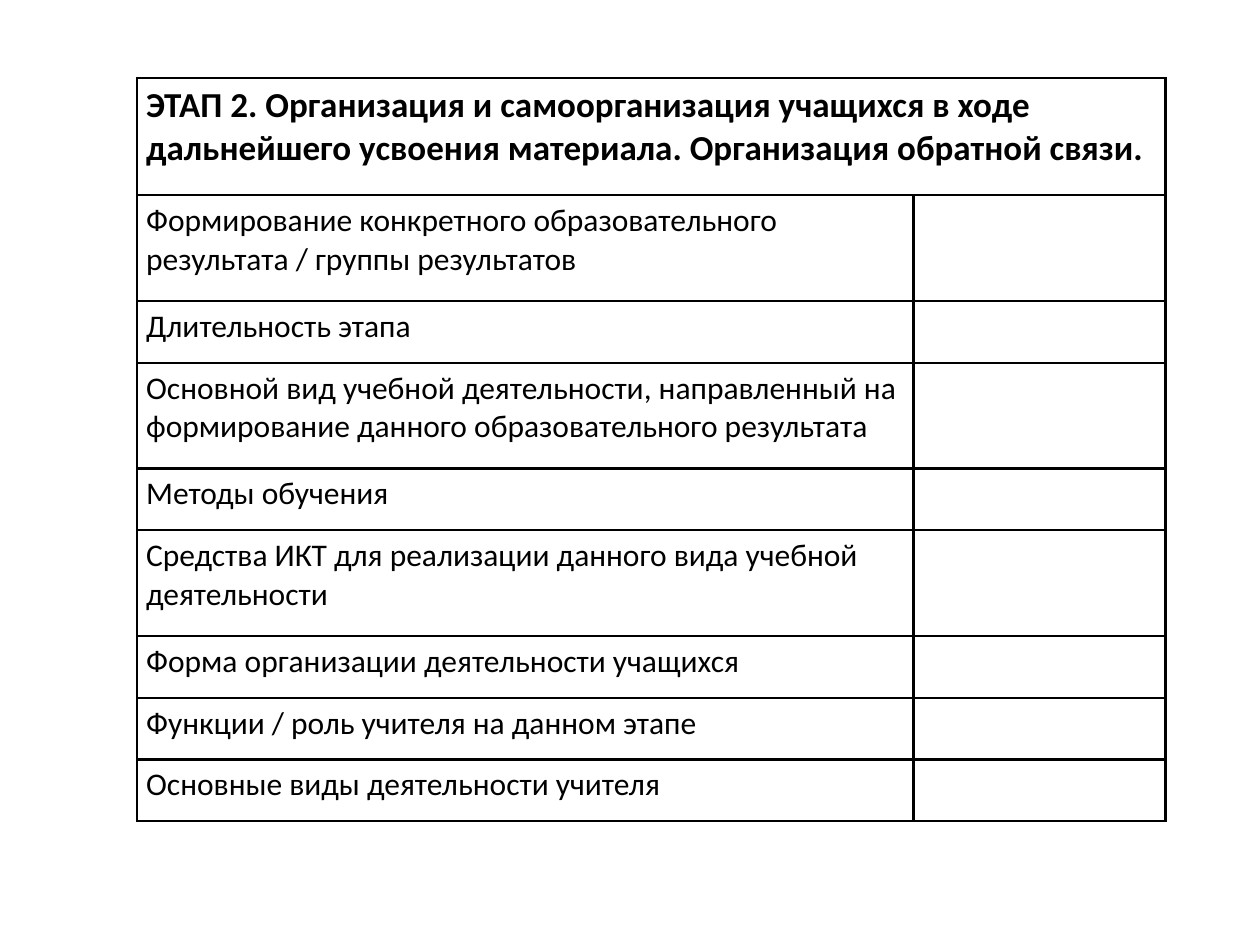
"""Build a slide with a lesson-stage planning table."""
from dataclasses import dataclass

from lxml import etree
from pptx import Presentation
from pptx.dml.color import RGBColor
from pptx.enum.text import MSO_ANCHOR
from pptx.oxml.ns import qn
from pptx.table import _Cell
from pptx.util import Inches, Pt

TOP = MSO_ANCHOR.TOP
BLANK_LAYOUT = 6
BORDER_TAGS = ("a:lnL", "a:lnR", "a:lnT", "a:lnB")


@dataclass(frozen=True)
class Theme:
    font: str = "Calibri"
    ink: str = "000000"
    heading_size: int = 20
    body_size: int = 18
    border_width: float = 1.5


@dataclass(frozen=True)
class Row:
    text: str
    height: float = 0.49
    heading: bool = False


THEME = Theme()
TALL = 0.84
LEFT, TABLE_TOP = 1.09, 0.62
COLUMN_WIDTHS = (6.16, 2)
ROWS = (
    Row("ЭТАП 2. Организация и самоорганизация учащихся в ходе дальнейшего "
        "усвоения материала. Организация обратной связи.", 0.93, True),
    Row("Формирование конкретного образовательного результата / группы результатов", TALL),
    Row("Длительность этапа"),
    Row("Основной вид учебной деятельности, направленный на формирование "
        "данного образовательного результата", TALL),
    Row("Методы обучения"),
    Row("Средства ИКТ для реализации данного вида учебной деятельности", TALL),
    Row("Форма организации деятельности учащихся"),
    Row("Функции / роль учителя на данном этапе"),
    Row("Основные виды деятельности учителя"),
)


def style_cell(cell: _Cell) -> None:
    cell.margin_left = cell.margin_right = Inches(0.07)
    cell.margin_top = cell.margin_bottom = Inches(0.05)
    cell.vertical_anchor = TOP
    props = cell._tc.get_or_add_tcPr()
    for tag in BORDER_TAGS:
        line = etree.SubElement(props, qn(tag), w=str(Pt(THEME.border_width)))
        fill = etree.SubElement(line, qn("a:solidFill"))
        etree.SubElement(fill, qn("a:srgbClr"), val=THEME.ink)
    cell.fill.background()


def write_label(cell: _Cell, row: Row) -> None:
    p = cell.text_frame.paragraphs[0]
    p.text = row.text
    font = p.runs[0].font
    font.name = THEME.font
    font.size = Pt(THEME.heading_size if row.heading else THEME.body_size)
    font.bold = row.heading
    font.color.rgb = RGBColor.from_string(THEME.ink)


def main() -> None:
    prs = Presentation()
    prs.slide_width, prs.slide_height = Inches(10), Inches(7.5)
    s = prs.slides.add_slide(prs.slide_layouts[BLANK_LAYOUT])
    table = s.shapes.add_table(
        len(ROWS), len(COLUMN_WIDTHS), Inches(LEFT), Inches(TABLE_TOP),
        Inches(sum(COLUMN_WIDTHS)), Inches(sum(row.height for row in ROWS))).table
    table.first_row = table.horz_banding = False
    for column, width in zip(table.columns, COLUMN_WIDTHS):
        column.width = Inches(width)
    for i, row in enumerate(ROWS):
        table.rows[i].height = Inches(row.height)
        for cell in table.rows[i].cells:
            style_cell(cell)
        if row.heading:
            table.cell(i, 0).merge(table.cell(i, len(COLUMN_WIDTHS) - 1))
        write_label(table.cell(i, 0), row)
    prs.save("out.pptx")


if __name__ == "__main__":
    main()
